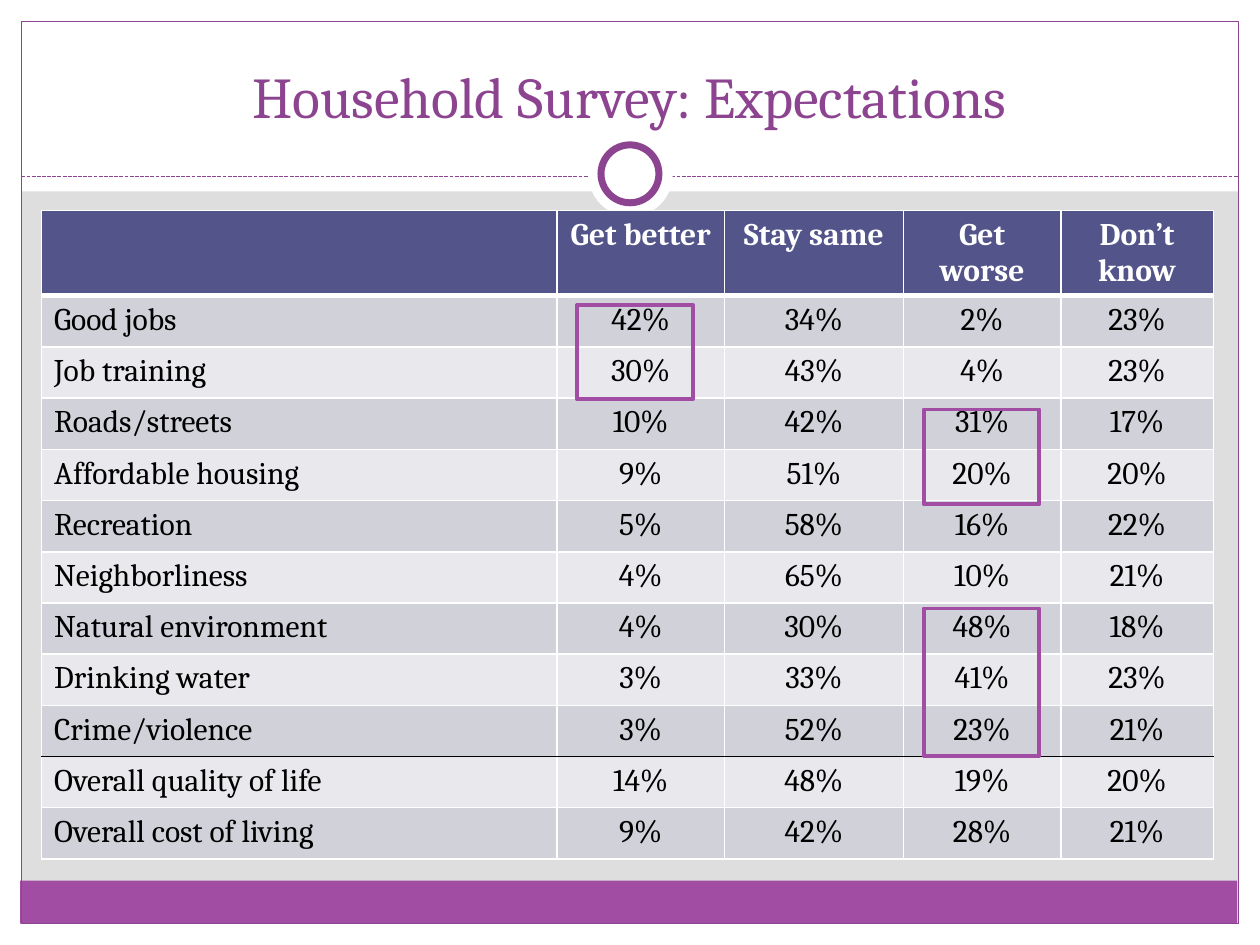
from dataclasses import dataclass
from lxml.etree import SubElement
from pptx import Presentation
from pptx.dml.color import RGBColor
from pptx.enum.dml import MSO_LINE
from pptx.enum.shapes import MSO_CONNECTOR, MSO_SHAPE
from pptx.enum.text import MSO_ANCHOR, PP_ALIGN
from pptx.oxml.ns import qn
from pptx.util import Inches, Pt

TITLE = "Household Survey: Expectations"
HEADS = ["", "Get better", "Stay same", "Get worse", "Don’t know"]
ROWS = [
    ("Good jobs", 42, 34, 2, 23),
    ("Job training", 30, 43, 4, 23),
    ("Roads/streets", 10, 42, 31, 17),
    ("Affordable housing", 9, 51, 20, 20),
    ("Recreation", 5, 58, 16, 22),
    ("Neighborliness", 4, 65, 10, 21),
    ("Natural environment", 4, 30, 48, 18),
    ("Drinking water", 3, 33, 41, 23),
    ("Crime/violence", 3, 52, 23, 21),
    ("Overall quality of life", 14, 48, 19, 20),
    ("Overall cost of living", 9, 42, 28, 21),
]
WIDTHS = [4.09, 1.33, 1.42, 1.25, 1.21]
HEAD_H, BODY_H = 0.67, 4.47
TOPICS = 9
MARKS = [(4.58, 2.42, 0.92, 0.75), (7.33, 4.83, 0.92, 1.17), (7.33, 3.25, 0.92, 0.75)]


@dataclass
class Theme:
    font: str = "Cambria"
    back: str = "DEDEDE"
    white: str = "FFFFFF"
    black: str = "000000"
    plum: str = "8D4490"
    violet: str = "A04DA3"
    head: str = "53548A"
    bands: tuple = ("D1D1DA", "E9E9ED")
    title: int = 33
    body: int = 18


theme = Theme()
RECT, OVAL = MSO_SHAPE.RECTANGLE, MSO_SHAPE.OVAL
DECOR = [
    (RECT, (0, 7.33, 10, 0.17), theme.white, None, 0),
    (RECT, (0, 0, 10, 1.52), theme.white, None, 0),
    (RECT, (0, 0, 0.17, 7.5), theme.white, None, 0),
    (RECT, (9.83, 0, 0.17, 7.5), theme.white, None, 0),
    (RECT, (0.16, 6.99, 9.66, 0.34), theme.violet, None, 0),
    (RECT, (0.17, 0.17, 9.66, 7.16), None, theme.plum, 0.75),
]
RINGS = [
    (OVAL, (4.67, 1.05, 0.67, 0.67), theme.white, None, 0),
    (OVAL, (4.77, 1.15, 0.46, 0.46), theme.white, theme.plum, 4),
]


def rgb(code):
    return RGBColor.from_string(code)


def style(para, size, color, align, bold=False):
    para.alignment = align
    for run in para.runs:
        font = run.font
        font.name, font.size, font.bold = theme.font, Pt(size), bold
        font.color.rgb = rgb(color)


def draw(slide, kind, box, fill, line, width):
    shape = slide.shapes.add_shape(kind, *map(Inches, box))
    shape.shadow.inherit = False
    if fill:
        shape.fill.solid()
        shape.fill.fore_color.rgb = rgb(fill)
    else:
        shape.fill.background()
    if line:
        shape.line.color.rgb = rgb(line)
        shape.line.width = Pt(width)
    else:
        shape.line.fill.background()


def rule(slide):
    ends = map(Inches, (0.17, 1.4, 9.83, 1.4))
    line = slide.shapes.add_connector(MSO_CONNECTOR.STRAIGHT, *ends)
    line.line.color.rgb = rgb(theme.plum)
    line.line.width = Pt(0.75)
    line.line.dash_style = MSO_LINE.SQUARE_DOT
    SubElement(line._element.spPr, qn("a:effectLst"))


def border(cell, side, color, width=1):
    props = cell._tc.get_or_add_tcPr()
    edge = SubElement(props, qn(f"a:ln{side}"), w=str(Pt(width)))
    fill = SubElement(edge, qn("a:solidFill"))
    SubElement(fill, qn("a:srgbClr"), val=color)


def edges(cell, row):
    top = theme.black if row == TOPICS + 1 else theme.white
    base = theme.black if row == TOPICS else theme.white
    border(cell, "L", theme.white)
    border(cell, "R", theme.white)
    border(cell, "T", top, 3 if row == 1 else 1)
    border(cell, "B", base, 3 if row == 0 else 1)


def grid(slide):
    data = [HEADS] + [[name] + [f"{n}%" for n in nums] for name, *nums in ROWS]
    box = map(Inches, (0.33, 1.67, sum(WIDTHS), HEAD_H + BODY_H))
    table = slide.shapes.add_table(len(data), len(HEADS), *box).table
    for col, width in zip(table.columns, WIDTHS):
        col.width = Inches(width)
    for r, texts in enumerate(data):
        head = r == 0
        table.rows[r].height = Inches(HEAD_H if head else BODY_H / len(ROWS))
        for c, text in enumerate(texts):
            cell = table.cell(r, c)
            edges(cell, r)
            cell.fill.solid()
            cell.fill.fore_color.rgb = rgb(theme.head if head else theme.bands[(r - 1) % 2])
            cell.text_frame.text = text
            align = PP_ALIGN.CENTER if c else PP_ALIGN.LEFT
            color = theme.white if head else theme.black
            style(cell.text_frame.paragraphs[0], theme.body, color, align, head)


def heading(slide):
    title = slide.shapes.title
    title.left, title.top, title.width, title.height = map(Inches, (0.33, 0.25, 9.33, 0.83))
    frame = title.text_frame
    frame.text = TITLE
    frame.vertical_anchor = MSO_ANCHOR.BOTTOM
    style(frame.paragraphs[0], theme.title, theme.plum, PP_ALIGN.CENTER)
    slide.shapes._spTree.append(title._element)


def main():
    deck = Presentation()
    deck.slide_width, deck.slide_height = Inches(10), Inches(7.5)
    slide = deck.slides.add_slide(deck.slide_layouts[5])
    slide.background.fill.solid()
    slide.background.fill.fore_color.rgb = rgb(theme.back)
    for part in DECOR:
        draw(slide, *part)
    rule(slide)
    for ring in RINGS:
        draw(slide, *ring)
    heading(slide)
    grid(slide)
    for box in MARKS:
        draw(slide, RECT, box, None, theme.violet, 2.25)
    deck.save("out.pptx")


if __name__ == "__main__":
    main()
